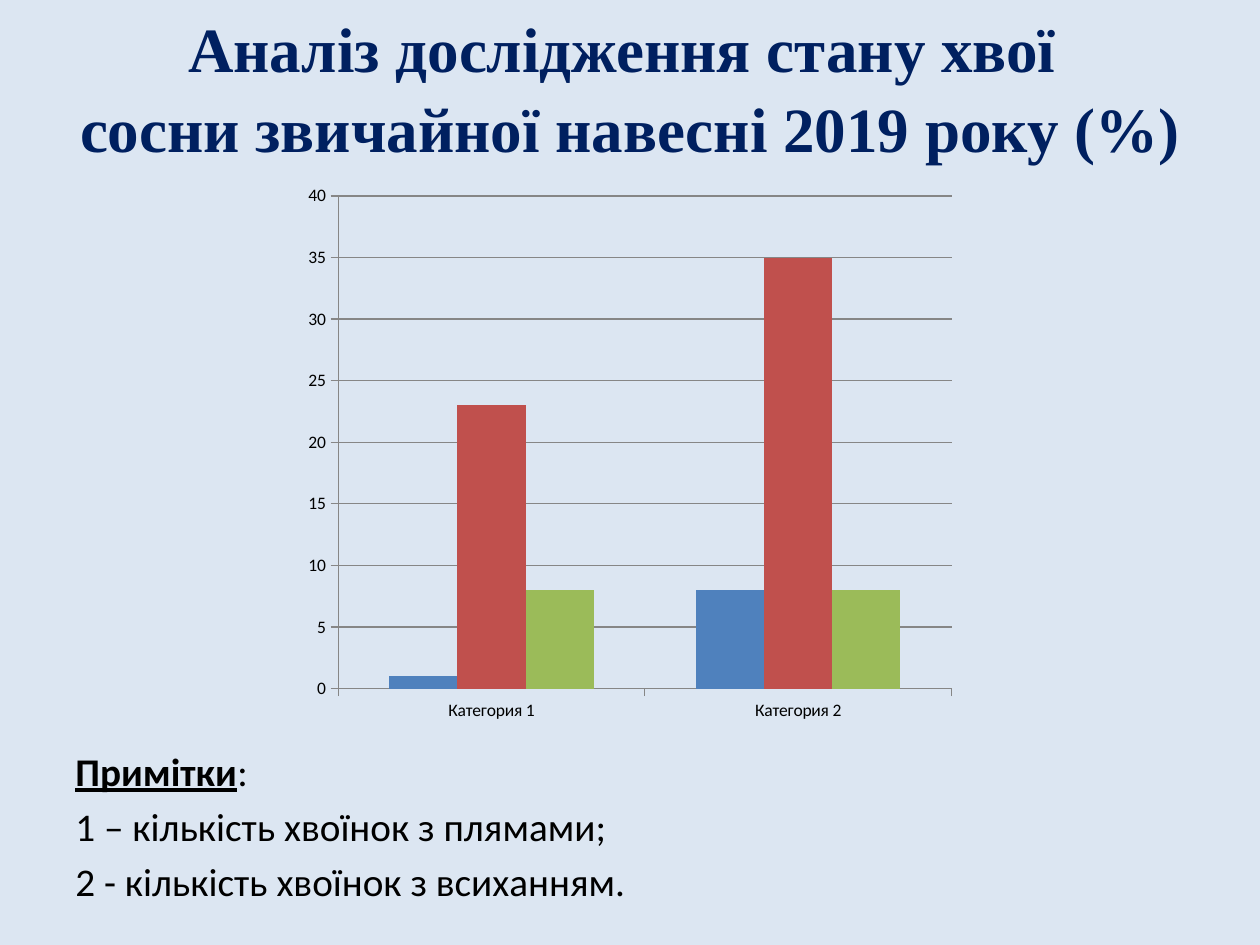
from dataclasses import dataclass
from typing import Any

from pptx import Presentation
from pptx import util as u
from pptx.chart.data import CategoryChartData
from pptx.dml.color import RGBColor
from pptx.enum import chart as charts, text

PX_PER_INCH = 126
AXIS_GREY = "868686"
BLACK = "000000"


@dataclass(frozen=True)
class Area:
    left: int
    top: int
    width: int
    height: int

    def emu(self) -> tuple[u.Emu, ...]:
        return tuple(px(n) for n in (self.left, self.top, self.width, self.height))


@dataclass(frozen=True)
class Span:
    words: str
    bold: bool = False
    underline: bool = False


@dataclass(frozen=True)
class Series:
    name: str
    values: tuple[int, ...]
    color: str


@dataclass(frozen=True)
class TextStyle:
    font: str
    size: float
    color: str
    frame: dict[str, Any]
    para: dict[str, Any]
    gap: float = 0


TITLE_STYLE = TextStyle(
    "Times New Roman", 36, "002060",
    {"word_wrap": True, "vertical_anchor": text.MSO_ANCHOR.MIDDLE},
    {"alignment": text.PP_ALIGN.CENTER, "line_spacing": 1.06},
)
NOTES_STYLE = TextStyle(
    "Calibri", 22.4, BLACK,
    {"word_wrap": True, "vertical_anchor": text.MSO_ANCHOR.TOP},
    {"alignment": text.PP_ALIGN.LEFT},
    gap=4.5,
)
TITLE = [[Span("Аналіз дослідження стану хвої \vсосни звичайної навесні 2019 року (%)", bold=True)]]
NOTES = [
    [Span("Примітки", bold=True, underline=True), Span(":")],
    [Span("1 – кількість хвоїнок з плямами;")],
    [Span("2 - кількість хвоїнок з всиханням.")],
]
CATEGORIES = ("Категория 1", "Категория 2")
SERIES = (
    Series("Series 1", (1, 8), "4F81BD"),
    Series("Series 2", (23, 35), "C0504D"),
    Series("Series 3", (8, 8), "9BBB59"),
)


def px(length: int) -> u.Emu:
    return u.Emu(round(length * 914400 / PX_PER_INCH))


def color(value: str) -> RGBColor:
    return RGBColor.from_string(value)


def apply(target: Any, values: dict[str, Any]) -> None:
    for name, value in values.items():
        setattr(target, name, value)


def draw_text(page: Any, area: Area, paragraphs: list[list[Span]], style: TextStyle) -> None:
    frame = page.shapes.add_textbox(*area.emu()).text_frame
    apply(frame, style.frame)
    for index, spans in enumerate(paragraphs):
        para = frame.add_paragraph() if index else frame.paragraphs[0]
        apply(para, style.para)
        if index:
            para.space_before = u.Pt(style.gap)
        for span in spans:
            for number, line in enumerate(span.words.split("\v")):
                if number:
                    para.add_line_break()
                run = para.add_run()
                run.text = line
                apply(run.font, {"name": style.font, "size": u.Pt(style.size),
                                 "bold": span.bold, "underline": span.underline})
                run.font.color.rgb = color(style.color)


def draw_line(line: Any) -> None:
    line.width = u.Pt(0.75)
    line.color.rgb = color(AXIS_GREY)


def draw_chart(page: Any, area: Area) -> None:
    data = CategoryChartData()
    data.categories = CATEGORIES
    for series in SERIES:
        data.add_series(series.name, series.values)
    chart = page.shapes.add_chart(charts.XL_CHART_TYPE.COLUMN_CLUSTERED, *area.emu(), data).chart
    apply(chart, {"has_legend": False, "has_title": False})
    apply(chart.font, {"name": "Calibri", "size": u.Pt(10)})
    chart.font.color.rgb = color(BLACK)
    apply(chart.plots[0], {"gap_width": 150, "overlap": 0, "vary_by_categories": False})
    for drawn, series in zip(chart.plots[0].series, SERIES):
        drawn.invert_if_negative = False
        drawn.format.fill.solid()
        drawn.format.fill.fore_color.rgb = color(series.color)
    for axis in (chart.category_axis, chart.value_axis):
        apply(axis, {"major_tick_mark": charts.XL_TICK_MARK.OUTSIDE,
                     "minor_tick_mark": charts.XL_TICK_MARK.NONE})
        draw_line(axis.format.line)
    apply(chart.value_axis, {"minimum_scale": 0, "maximum_scale": 40,
                             "major_unit": 5, "has_major_gridlines": True})
    draw_line(chart.value_axis.major_gridlines.format.line)


def main() -> None:
    deck = Presentation()
    apply(deck, {"slide_width": px(1260), "slide_height": px(945)})
    page = deck.slides.add_slide(deck.slide_layouts[6])
    page.background.fill.solid()
    page.background.fill.fore_color.rgb = color("DCE6F2")
    draw_text(page, Area(63, 3, 1134, 165), TITLE, TITLE_STYLE)
    draw_text(page, Area(63, 741, 1134, 159), NOTES, NOTES_STYLE)
    draw_chart(page, Area(295, 175, 670, 557))
    deck.save("out.pptx")


if __name__ == "__main__":
    main()
